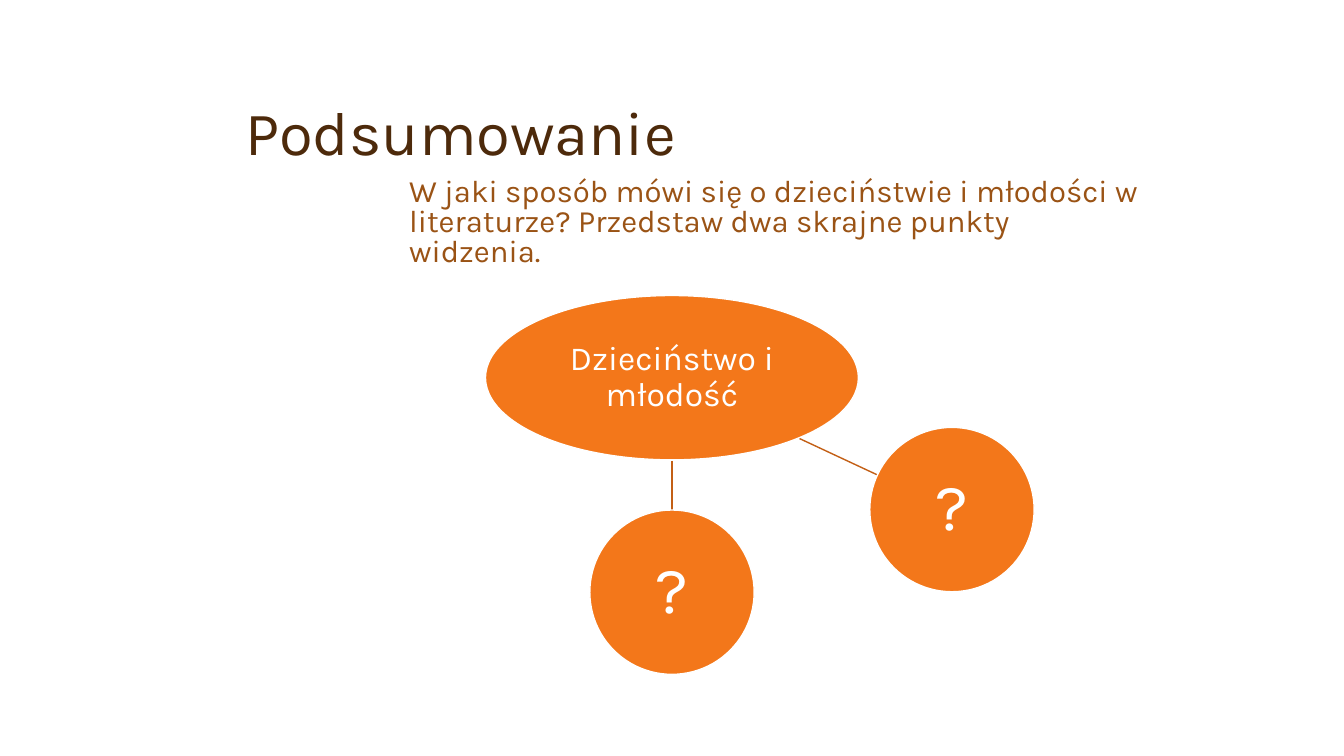
"""Builds the summary slide with a mind map of childhood and youth."""
from lxml import etree
from pptx import Presentation
from pptx.dml.color import RGBColor
from pptx.enum import shapes, text
from pptx.oxml import ns
from pptx.util import Pt

COLORS = {"title": "4D2A0B", "question": "9A5315", "node": "F3771A",
          "link": "C35F15", "white": "FFFFFF"}
DIAMETER = 117.4


def color(name):
    return RGBColor.from_string(COLORS[name])


def write(frame, wording, size, ink, spacing):
    frame.text = wording
    frame.word_wrap = True
    frame.auto_size = text.MSO_AUTO_SIZE.NONE
    paragraph = frame.paragraphs[0]
    paragraph.line_spacing = spacing
    paragraph.space_before = Pt(0)
    font = paragraph.runs[0].font
    font.name, font.size = "Karla", Pt(size)
    font.color.rgb = color(ink)
    return paragraph


prs = Presentation()
prs.slide_width, prs.slide_height = Pt(960), Pt(540)
slide = prs.slides.add_slide(prs.slide_layouts[1])

heading, question = slide.placeholders
heading.left, heading.top, heading.width, heading.height = Pt(168), Pt(39), Pt(540), Pt(85)
heading.text_frame.vertical_anchor = text.MSO_ANCHOR.BOTTOM
heading_line = write(heading.text_frame, "Podsumowanie", 44, "title", 0.9)
heading_line.alignment = text.PP_ALIGN.LEFT

question.left, question.top, question.width, question.height = Pt(285), Pt(124), Pt(540), Pt(72)
question_line = write(
    question.text_frame,
    "W jaki sposób mówi się o dzieciństwie i młodości w literaturze? "
    "Przedstaw dwa skrajne punkty widzenia.",
    22.2, "question", 0.8)
properties = question_line._p.get_or_add_pPr()
properties.set("marL", "0")
properties.set("indent", "0")
etree.SubElement(properties, ns.qn("a:buNone"))

links = [(571, 313.2, 626.4, 339.1), (480, 329, 480, 364.3)]
for x1, y1, x2, y2 in links:
    link = slide.shapes.add_connector(
        shapes.MSO_CONNECTOR.STRAIGHT, Pt(x1), Pt(y1), Pt(x2), Pt(y2))
    link.line.color.rgb = color("link")
    link.line.width = Pt(1)
    etree.SubElement(link._element.spPr, ns.qn("a:effectLst"))

nodes = [("Dzieciństwo i młodość", 480, 269.8, 266.4, 24, 1.4),
         ("?", 680, 364, DIAMETER, 47, 2.2),
         ("?", 480, 423, DIAMETER, 47, 2.2)]
for wording, center_x, center_y, width, size, inset in nodes:
    node = slide.shapes.add_shape(
        shapes.MSO_SHAPE.OVAL, Pt(center_x - width / 2), Pt(center_y - DIAMETER / 2),
        Pt(width), Pt(DIAMETER))
    node.shadow.inherit = False
    node.fill.solid()
    node.fill.fore_color.rgb = color("node")
    node.line.color.rgb = color("white")
    node.line.width = Pt(1)
    frame = node.text_frame
    frame.margin_left = frame.margin_right = Pt(inset)
    frame.margin_top = frame.margin_bottom = Pt(inset)
    frame.vertical_anchor = text.MSO_ANCHOR.MIDDLE
    write(frame, wording, size, "white", 0.9).alignment = text.PP_ALIGN.CENTER

prs.save("out.pptx")
